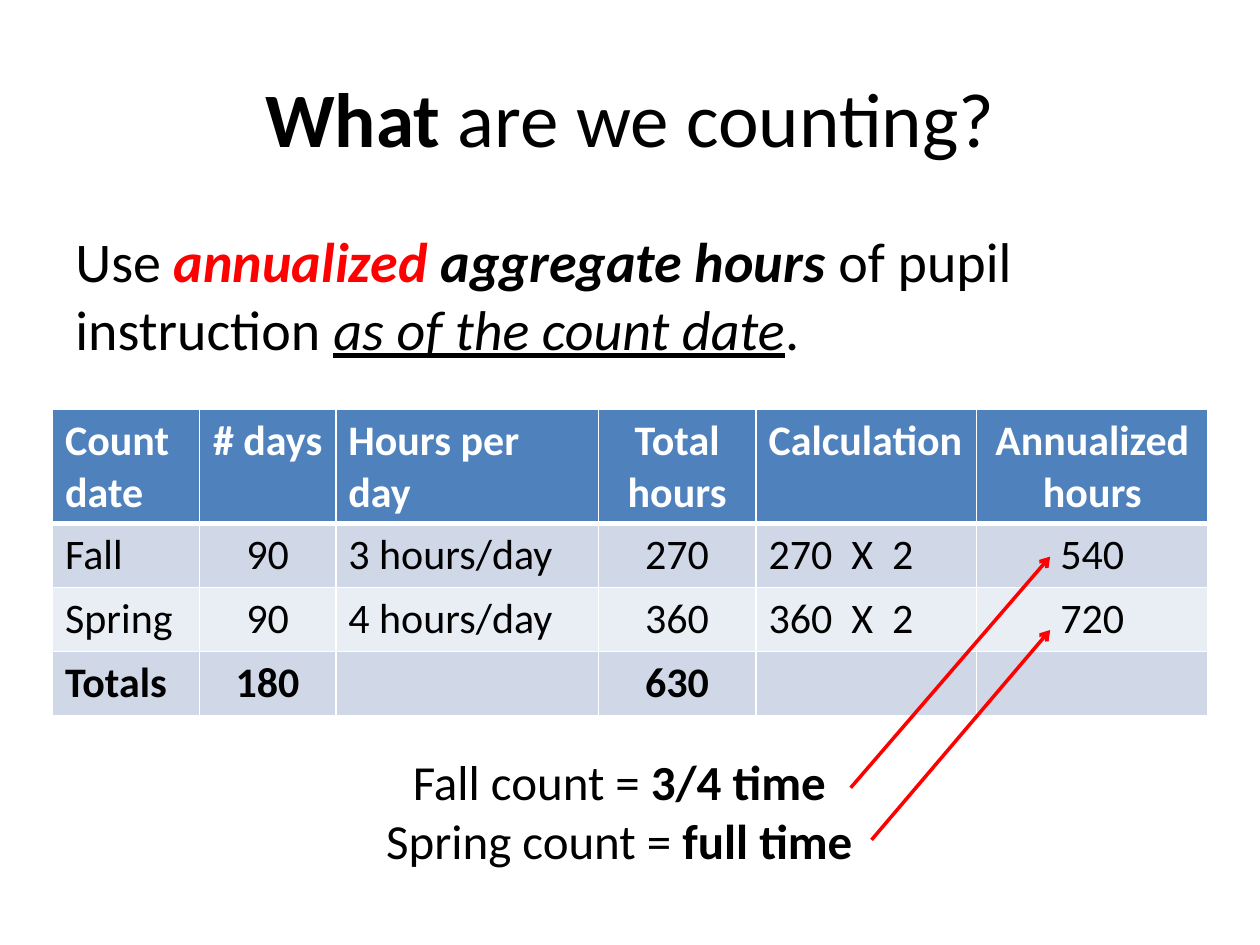
import lxml.etree
import pptx
import pptx.dml.color
import pptx.enum.shapes
import pptx.enum.text
import pptx.oxml.ns
import pptx.util
from dataclasses import dataclass

Cm = pptx.util.Cm
Pt = pptx.util.Pt
Align = pptx.enum.text.PP_ALIGN
Anchor = pptx.enum.text.MSO_ANCHOR


@dataclass(frozen=True)
class Theme:
    font: str = "Calibri"
    text: str = "000000"
    light: str = "FFFFFF"
    accent: str = "FF0000"
    header: str = "4F81BD"
    bands: tuple = ("D0D8E8", "E9EDF4")
    title_size: int = 44
    body_size: int = 32
    note_size: int = 28
    table_size: int = 24
    arrow_width: int = 2
    border_width: int = 1
    header_rule: int = 3


theme = Theme()

BOLD = {"bold": True}
PLAIN = {}
TEXTS = [
    {
        "box": (1.27, 0.76, 22.86, 3.18),
        "size": theme.title_size,
        "align": Align.CENTER,
        "anchor": Anchor.MIDDLE,
        "paragraphs": [[("What", BOLD), (" are we counting?", PLAIN)]],
    },
    {
        "box": (1.27, 4.45, 22.86, 3.38),
        "size": theme.body_size,
        "align": Align.LEFT,
        "anchor": Anchor.TOP,
        "paragraphs": [[
            ("Use ", PLAIN),
            ("annualized", {"bold": True, "italic": True, "color": theme.accent}),
            (" aggregate hours ", {"bold": True, "italic": True}),
            ("of pupil instruction ", PLAIN),
            ("as of the count date", {"italic": True, "underline": True}),
            (".", PLAIN),
        ]],
    },
    {
        "box": (6.56, 15.03, 11.85, 2.64),
        "size": theme.note_size,
        "align": Align.CENTER,
        "anchor": Anchor.TOP,
        "paragraphs": [
            [("Fall count = ", PLAIN), ("3/4 time", BOLD)],
            [("Spring count = ", PLAIN), ("full time", BOLD)],
        ],
    },
]

TABLE_ROWS = [
    ("Count date", "# days", "Hours per day", "Total hours", "Calculation", "Annualized hours"),
    ("Fall", "90", "3 hours/day", "270", "270  X  2", "540"),
    ("Spring", "90", "4 hours/day", "360", "360  X  2", "720"),
    ("Totals", "180", "", "630", "", ""),
]
TABLE_ORIGIN = (1.06, 8.26)
COLUMN_WIDTHS = (2.96, 2.75, 5.29, 3.18, 4.45, 4.66)
HEADER_HEIGHT, ROW_HEIGHT = 2.29, 1.29

ARROWS = [
    ((17.15, 15.88), (21.17, 11.22)),
    ((17.57, 16.93), (21.17, 12.7)),
]


def rgb(color):
    return pptx.dml.color.RGBColor.from_string(color)


def add_run(paragraph, text, size, color=theme.text, bold=False, italic=False, underline=False):
    run = paragraph.add_run()
    run.text = text
    font = run.font
    font.name, font.size = theme.font, Pt(size)
    font.bold, font.italic, font.underline = bold, italic, underline
    font.color.rgb = rgb(color)


def add_text(slide, box, size, align, anchor, paragraphs):
    frame = slide.shapes.add_textbox(*map(Cm, box)).text_frame
    frame.word_wrap = True
    frame.vertical_anchor = anchor
    for index, runs in enumerate(paragraphs):
        paragraph = frame.add_paragraph() if index else frame.paragraphs[0]
        paragraph.alignment = align
        for text, style in runs:
            add_run(paragraph, text, size, **style)


def set_borders(cell, top, bottom):
    properties = cell._tc.get_or_add_tcPr()
    widths = {"lnL": theme.border_width, "lnR": theme.border_width, "lnT": top, "lnB": bottom}
    for index, (side, width) in enumerate(widths.items()):
        line = lxml.etree.Element(pptx.oxml.ns.qn(f"a:{side}"), w=str(Pt(width)))
        fill = lxml.etree.SubElement(line, pptx.oxml.ns.qn("a:solidFill"))
        lxml.etree.SubElement(fill, pptx.oxml.ns.qn("a:srgbClr"), val=theme.light)
        properties.insert(index, line)


def add_count_table(slide):
    heights = [HEADER_HEIGHT] + [ROW_HEIGHT] * (len(TABLE_ROWS) - 1)
    extent = (sum(COLUMN_WIDTHS), sum(heights))
    table = slide.shapes.add_table(
        len(TABLE_ROWS), len(COLUMN_WIDTHS), *map(Cm, TABLE_ORIGIN + extent)
    ).table
    for column, width in zip(table.columns, COLUMN_WIDTHS):
        column.width = Cm(width)
    for row_index, values in enumerate(TABLE_ROWS):
        table.rows[row_index].height = Cm(heights[row_index])
        is_header = row_index == 0
        is_total = row_index == len(TABLE_ROWS) - 1
        background = theme.header if is_header else theme.bands[(row_index - 1) % 2]
        for column_index, value in enumerate(values):
            cell = table.cell(row_index, column_index)
            cell.fill.solid()
            cell.fill.fore_color.rgb = rgb(background)
            set_borders(
                cell,
                theme.header_rule if row_index == 1 else theme.border_width,
                theme.header_rule if is_header else theme.border_width,
            )
            paragraph = cell.text_frame.paragraphs[0]
            paragraph.alignment = Align.CENTER if column_index % 2 else Align.LEFT
            if value:
                color = theme.light if is_header else theme.text
                add_run(paragraph, value, theme.table_size, color, is_header or is_total)


def add_arrow(slide, start, end):
    connector = slide.shapes.add_connector(
        pptx.enum.shapes.MSO_CONNECTOR.STRAIGHT, *map(Cm, start + end)
    )
    connector.line.color.rgb = rgb(theme.accent)
    connector.line.width = Pt(theme.arrow_width)
    line = connector.line._get_or_add_ln()
    lxml.etree.SubElement(line, pptx.oxml.ns.qn("a:tailEnd"), type="arrow")
    lxml.etree.SubElement(connector._element.spPr, pptx.oxml.ns.qn("a:effectLst"))


def main():
    presentation = pptx.Presentation()
    presentation.slide_width, presentation.slide_height = Cm(25.4), Cm(19.05)
    slide = presentation.slides.add_slide(presentation.slide_layouts[6])
    for text in TEXTS:
        add_text(slide, **text)
    add_count_table(slide)
    for start, end in ARROWS:
        add_arrow(slide, start, end)
    presentation.save("out.pptx")


if __name__ == "__main__":
    main()
